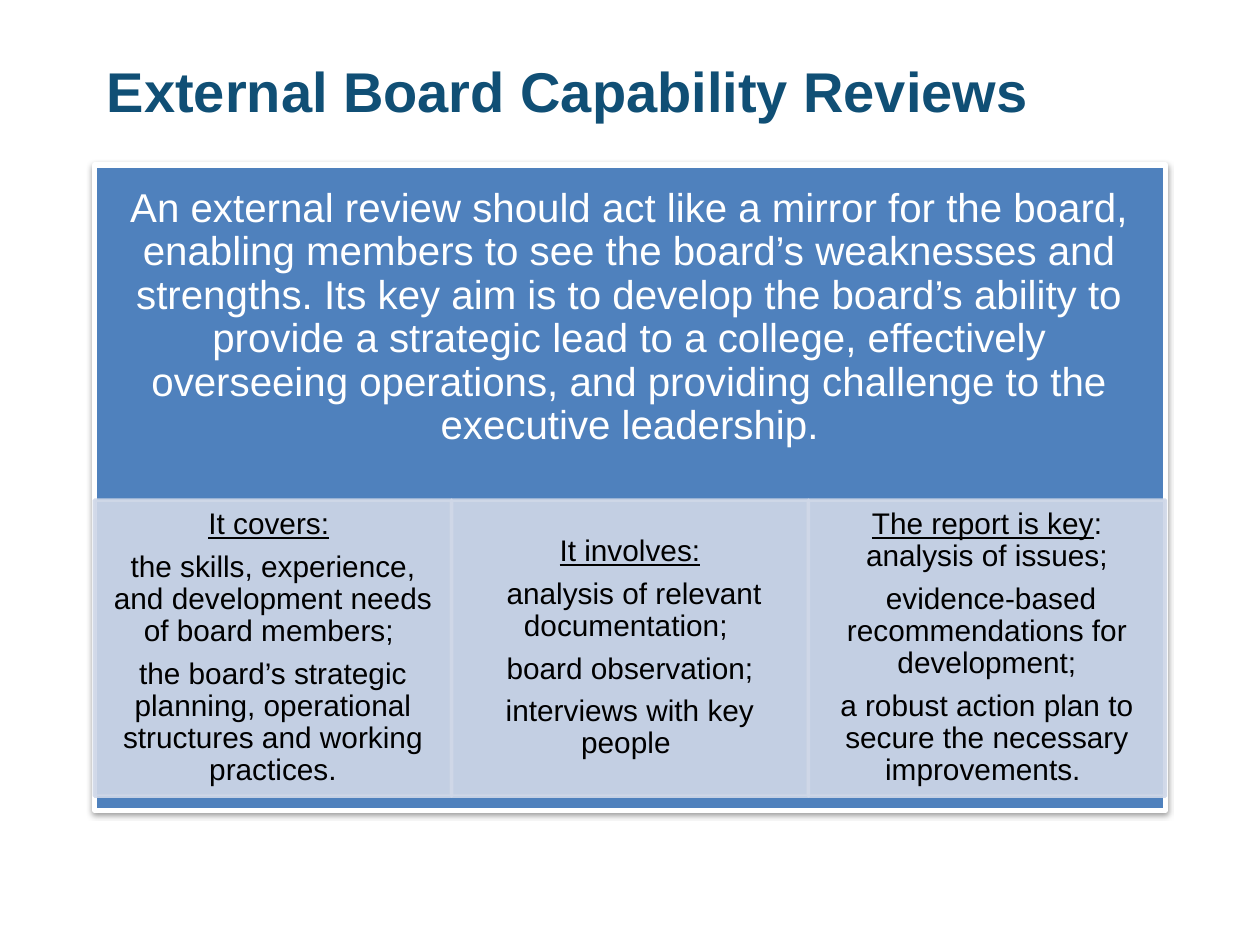
import lxml.etree
import pptx
import pptx.dml.color
import pptx.enum.shapes
import pptx.enum.text
import pptx.oxml
import pptx.oxml.ns
import pptx.util

RGB = pptx.dml.color.RGBColor
NAVY = RGB(0x10, 0x4F, 0x75)
BLUE = RGB(0x4F, 0x81, 0xBD)
PALE = RGB(0xD0, 0xD8, 0xE8)
WHITE = RGB(0xFF, 0xFF, 0xFF)
BLACK = RGB(0, 0, 0)

LEFT, WIDTH = 7.5, 85
AIM = (
    "An external review should act like a mirror for the board, enabling members "
    "to see the board’s weaknesses and strengths. Its key aim is to develop the "
    "board’s ability to provide a strategic lead to a college, effectively "
    "overseeing operations, and providing challenge to the executive leadership."
)
COLUMNS = [
    ("It covers:", " ", [
        "the skills, experience, and development needs of board members; ",
        "the board’s strategic planning, operational structures and working practices.",
    ]),
    ("It involves:", "", [
        " analysis of relevant documentation; ",
        "board observation;",
        "interviews with key people ",
    ]),
    ("The report is key", ": analysis of issues;", [
        " evidence-based recommendations for development;",
        "a robust action plan to secure the necessary improvements. ",
    ]),
]


def write(p, text, size=17, color=BLACK, bold=False, underline=False):
    r = p.add_run()
    r.text = text
    r.font.name = "Arial"
    r.font.size = pptx.util.Pt(size)
    r.font.color.rgb = color
    r.font.bold = bold
    r.font.underline = underline


class Deck:
    def __init__(self):
        self.prs = pptx.Presentation()
        self.prs.slide_width = pptx.util.Inches(10)
        self.prs.slide_height = pptx.util.Inches(7.5)
        self.s = self.prs.slides.add_slide(self.prs.slide_layouts[6])

    def place(self, x, y, w, h):
        sw, sh = self.prs.slide_width, self.prs.slide_height
        return [round(share * side / 100) for share, side in zip((x, y, w, h), (sw, sh, sw, sh))]

    def frame(self, sp, anchor, across, down):
        tf = sp.text_frame
        tf.word_wrap = True
        tf.vertical_anchor = anchor
        tf.margin_left = tf.margin_right = pptx.util.Inches(across)
        tf.margin_top = tf.margin_bottom = pptx.util.Inches(down)
        return tf

    def title(self, text, *box):
        sp = self.s.shapes.add_textbox(*self.place(*box))
        tf = self.frame(sp, pptx.enum.text.MSO_ANCHOR.MIDDLE, 0.1, 0.05)
        write(tf.paragraphs[0], text, size=32, color=NAVY, bold=True)

    def rect(self, box, fill, line, width):
        sp = self.s.shapes.add_shape(pptx.enum.shapes.MSO_SHAPE.RECTANGLE, *self.place(*box))
        sp.shadow.inherit = False
        sp.fill.solid()
        sp.fill.fore_color.rgb = fill
        sp.line.color.rgb = line
        sp.line.width = pptx.util.Pt(width)
        return sp

    def paragraph(self, tf, first, after):
        p = tf.paragraphs[0] if first else tf.add_paragraph()
        p.alignment = pptx.enum.text.PP_ALIGN.CENTER
        p.line_spacing = 0.9
        p.space_after = pptx.util.Pt(after)
        return p

    def panel(self, text, *box):
        sp = self.rect(box, BLUE, WHITE, 3)
        effects = sp._element.spPr.find(pptx.oxml.ns.qn("a:effectLst"))
        effects.append(pptx.oxml.parse_xml(
            f'<a:outerShdw {pptx.oxml.ns.nsdecls("a")} blurRad="39370" dist="20320" '
            'dir="5400000" rotWithShape="0"><a:srgbClr val="000000">'
            '<a:alpha val="38000"/></a:srgbClr></a:outerShdw>'))
        tf = self.frame(sp, pptx.enum.text.MSO_ANCHOR.TOP, 0.18, 0.18)
        write(self.paragraph(tf, True, 8), text, size=23, color=WHITE)

    def card(self, heading, tail, items, *box):
        sp = self.rect(box, PALE, PALE, 2)
        for color in sp._element.spPr.iter(pptx.oxml.ns.qn("a:srgbClr")):
            lxml.etree.SubElement(color, pptx.oxml.ns.qn("a:alpha"), val="90000")
        tf = self.frame(sp, pptx.enum.text.MSO_ANCHOR.MIDDLE, 0.13, 0.02)
        p = self.paragraph(tf, True, 6)
        write(p, heading, underline=True)
        if tail:
            write(p, tail)
        for item in items:
            write(self.paragraph(tf, False, 6), item)


def main():
    deck = Deck()
    deck.title("External Board Capability Reviews", LEFT, 4.8, WIDTH, 9.47)
    deck.panel(AIM, LEFT, 17.47, WIDTH, 68.27)
    w = WIDTH / len(COLUMNS)
    for i, column in enumerate(COLUMNS):
        deck.card(*column, LEFT + i * w, 52.93, w, 31.33)
    deck.prs.save("out.pptx")


if __name__ == "__main__":
    main()
